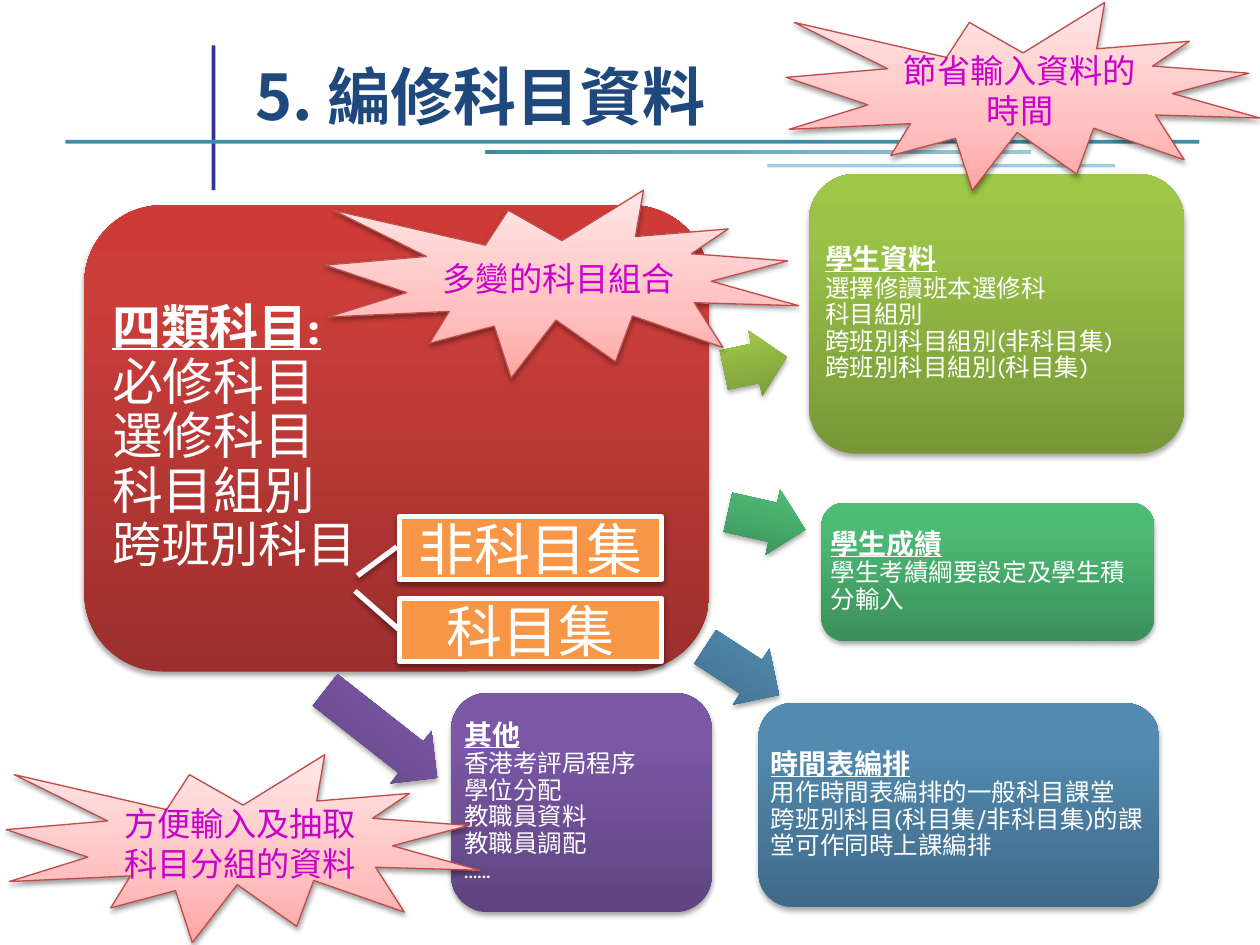
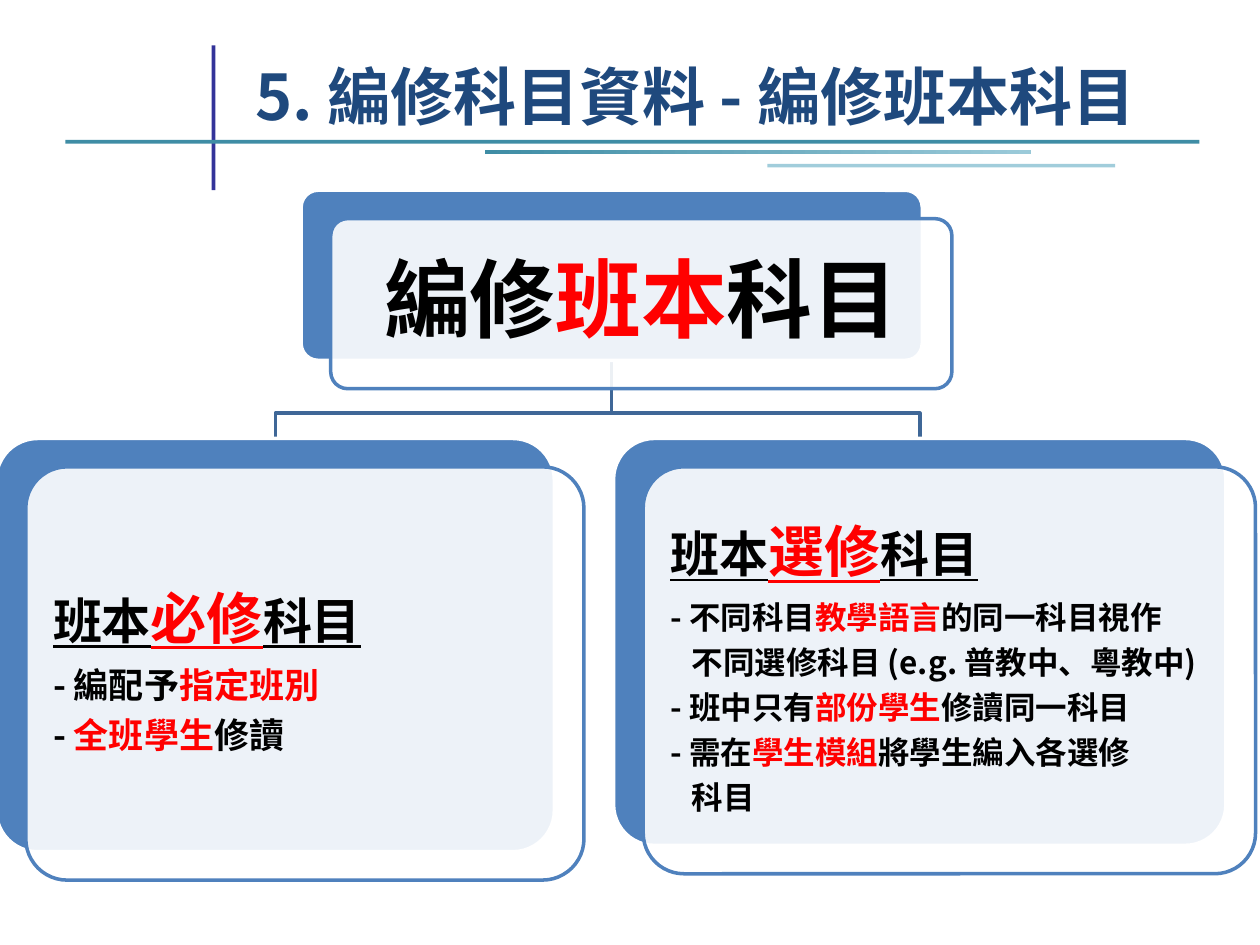
from dataclasses import dataclass
from itertools import chain, repeat

from pptx import Presentation
from pptx.dml.color import RGBColor
from pptx.enum.shapes import MSO_SHAPE as SHAPE
from pptx.enum.text import MSO_ANCHOR as ANCHOR, PP_ALIGN as ALIGN
from pptx.oxml import parse_xml
from pptx.oxml.ns import nsdecls, qn
from pptx.util import Inches, Pt

WHITE = RGBColor(0xFF, 0xFF, 0xFF)
BLACK = RGBColor(0, 0, 0)
RED = RGBColor(0xFF, 0, 0)
NAVY = RGBColor(0x1F, 0x49, 0x7D)
INDIGO = RGBColor(0x33, 0x33, 0x99)
TEAL = RGBColor(0x3F, 0x8D, 0xA5)
PALE_TEAL = RGBColor(0x9B, 0xCA, 0xD9)
LIGHT_TEAL = RGBColor(0xA1, 0xCD, 0xDB)
BLUE = RGBColor(0x4F, 0x81, 0xBD)
LINK_BLUE = RGBColor(0x3F, 0x67, 0x97)
ORANGE = RGBColor(0xF7, 0x96, 0x46)
MAGENTA = RGBColor(0xCC, 0, 0xCC)
SEAL_EDGE = RGBColor(0xBF, 0x4C, 0x48)


def ramp(positions, *colors):
    return list(zip(positions, map(RGBColor.from_string, colors)))


PANEL_STOPS = (0, 80, 100)
CRIMSON = ramp(PANEL_STOPS, "9C2F2D", "CB3E3A", "CE3B37")
LIME = ramp(PANEL_STOPS, "779737", "9BC348", "9DC746")
GREEN = ramp(PANEL_STOPS, "3B8F5A", "4DBA75", "4BBD75")
STEEL = ramp(PANEL_STOPS, "3F6A88", "528AB0", "518BB3")
PURPLE = ramp(PANEL_STOPS, "5F4480", "7B58A6", "7C57A8")
PINK = ramp((0, 35, 100), "FFA6A5", "FFC0BF", "FFE7E7")

KARLA = "Karla"
SANS_TC = "Noto Sans CJK TC"
SANS_SC = "Noto Sans CJK SC"

SLIDE_W, SLIDE_H = Inches(10), Inches(7.5)
COL, ROW = SLIDE_W / 100, SLIDE_H / 75


@dataclass
class Box:
    left: float
    top: float
    width: float
    height: float

    @property
    def center(self):
        return self.left + self.width / 2

    @property
    def bottom(self):
        return self.top + self.height

    def within(self, left, top, width, height):
        return Box(self.left + left, self.top + top, width, height)

    def emu(self):
        return (round(self.left * COL), round(self.top * ROW),
                round(self.width * COL), round(self.height * ROW))


PAGE = Box(0, 0, 100, 75)


def set_gradient(sp, stops, angle):
    sp.fill.background()
    gs = "".join(f'<a:gs pos="{pos * 1000}"><a:srgbClr val="{color}"/></a:gs>'
                 for pos, color in stops)
    spPr = sp._element.spPr
    spPr.replace(spPr.find(qn("a:noFill")), parse_xml(
        f'<a:gradFill {nsdecls("a")} rotWithShape="1"><a:gsLst>{gs}</a:gsLst>'
        f'<a:lin ang="{angle * 60000}" scaled="0"/></a:gradFill>'))


def set_line(sp, color, width):
    if color is None:
        sp.line.fill.background()
    else:
        sp.line.color.rgb = color
        sp.line.width = Pt(width)


def set_shadow(sp, alpha, dist):
    effects = sp._element.spPr.find(qn("a:effectLst"))
    effects.append(parse_xml(
        f'<a:outerShdw {nsdecls("a")} blurRad="{Pt(3.1)}" dist="{Pt(dist)}" '
        f'dir="5400000" rotWithShape="0"><a:srgbClr val="000000">'
        f'<a:alpha val="{alpha * 1000}"/></a:srgbClr></a:outerShdw>'))


def add_block(slide, kind, box, fill, line=None, width=1, adj=(), angle=270):
    sp = slide.shapes.add_shape(kind, *box.emu())
    for i, value in enumerate(adj):
        sp.adjustments[i] = value
    sp.shadow.inherit = False
    if isinstance(fill, list):
        set_gradient(sp, fill, angle)
    else:
        sp.fill.solid()
        sp.fill.fore_color.rgb = fill
    set_line(sp, line, width)
    return sp


def set_frame(sp, margin_x=0.1, margin_y=0.05):
    tf = sp.text_frame
    tf.word_wrap = True
    tf.vertical_anchor = ANCHOR.MIDDLE
    tf.margin_left = tf.margin_right = Inches(margin_x)
    tf.margin_top = tf.margin_bottom = Inches(margin_y)
    return tf


def set_font(p, name, color, size=None, bold=False):
    font = p.font
    font.name = name
    font.color.rgb = color
    font.bold = bold
    if size:
        font.size = Pt(size)
    font._element.find(qn("a:latin")).addnext(
        parse_xml(f'<a:ea {nsdecls("a")} typeface="{name}"/>'))


def add_bands(slide, layout):
    bands = [
        (Box(16.8, 3.6, 0.3, 11.5), INDIGO),
        (Box(5.2, 11.1, 90, 0.3), TEAL),
        (Box(38.5, 11.9, 43.3, 0.3), [(0, TEAL), (100, PALE_TEAL)]),
        (Box(60.9, 13, 27.6, 0.3), LIGHT_TEAL),
    ]
    for box, fill in bands:
        sp = add_block(slide, SHAPE.RECTANGLE, box, fill, angle=0)
        layout.shapes._spTree.append(sp._element)


def add_title(slide, text):
    title = slide.shapes.title
    title.left, title.top, title.width, title.height = Box(19.3, 2.8, 78.3, 8.3).emu()
    tf = title.text_frame
    tf.text = text
    tf.vertical_anchor = ANCHOR.BOTTOM
    p = tf.paragraphs[0]
    p.alignment = ALIGN.LEFT
    set_font(p, SANS_TC, NAVY, 36, True)


def add_panel(slide, box, fill, lines, sizes, margin=0.02):
    sp = add_block(slide, SHAPE.ROUNDED_RECTANGLE, box, fill)
    set_shadow(sp, 35, 1.8)
    p = set_frame(sp, margin, margin).paragraphs[0]
    p.alignment = ALIGN.LEFT
    p.line_spacing = 0.9
    set_font(p, KARLA, WHITE)
    for i, (line, size) in enumerate(zip(lines, sizes)):
        if i:
            p.add_line_break()
        r = p.add_run()
        r.text = line
        r.font.size = Pt(size)
        r.font.bold = r.font.underline = i == 0


def add_arrow(slide, box, fill, rotation):
    sp = add_block(slide, SHAPE.RIGHT_ARROW, box, fill, adj=(0.6, 0.5))
    sp.rotation = rotation
    set_shadow(sp, 35, 1.8)


def add_label(slide, kind, box, fill, text, size, color, line, width, adj=()):
    sp = add_block(slide, kind, box, fill, line, width, adj)
    set_shadow(sp, 38, 1.6)
    tf = set_frame(sp)
    tf.text = text
    p = tf.paragraphs[0]
    p.alignment = ALIGN.CENTER
    set_font(p, SANS_SC, color, size)


def add_subject_types(slide, box):
    add_panel(slide, box, CRIMSON,
              ["四類科目:", "必修科目", "選修科目", "科目組別", "跨班別科目"],
              (28, 29, 29, 29, 28), 0.04)


def add_uses(slide, box):
    uses = [
        (Box(64.2, 13.8, 29.8, 22.2), LIME, Box(57.4, 26.2, 5.1, 5.3), -11.8,
         ["學生資料", "選擇修讀班本選修科", "科目組別",
          "跨班別科目組別(非科目集)", "跨班別科目組別(科目集)"]),
        (Box(65.2, 39.9, 26.4, 11), GREEN, Box(57.7, 38.7, 6.3, 5.3), 12.7,
         ["學生成績", "學生考績綱要設定及學生積分輸入"]),
        (Box(60.2, 55.8, 31.8, 16.2), STEEL, Box(55.4, 50.6, 7, 5.3), 33.1,
         ["時間表編排", "用作時間表編排的一般科目課堂",
          "跨班別科目(科目集/非科目集)的課堂可作同時上課編排"]),
        (Box(35.8, 55, 20.7, 17.4), PURPLE, Box(24.6, 55.6, 11.3, 5.3), 38.1,
         ["其他", "香港考評局程序", "學位分配", "教職員資料", "教職員調配", "……"]),
    ]
    for panel, fill, arrow, rotation, lines in uses:
        add_arrow(slide, box.within(arrow.left, arrow.top, arrow.width, arrow.height),
                  fill, rotation)
        add_panel(slide, box.within(panel.left, panel.top, panel.width, panel.height),
                  fill, lines, chain([16], repeat(14)))


def add_set_callouts(slide, box):
    callouts = [
        (6.5, "科目集", (0.5, 0, -0.12, -0.17)),
        (0, "非科目集", (0.48, -0.01, 0.94, -0.16)),
    ]
    for top, text, adj in callouts:
        add_label(slide, SHAPE.LINE_CALLOUT_1, box.within(0, top, box.width, 5),
                  ORANGE, text, 32, WHITE, WHITE, 3, adj)


def add_benefits(slide, box):
    benefits = [
        (25.8, 15.1, "多變的科目組合"),
        (62.4, 0.2, "節省輸入資料的時間"),
        (0.5, 59.9, "方便輸入及抽取科目分組的資料"),
    ]
    for left, top, text in benefits:
        add_label(slide, SHAPE.EXPLOSION1, box.within(left, top, 37.6, 14.9),
                  PINK, text, 19, MAGENTA, SEAL_EDGE, 0.75)


def add_card(slide, box, paragraphs, margin, font, align=ALIGN.LEFT):
    add_block(slide, SHAPE.ROUNDED_RECTANGLE, box, BLUE, WHITE, 2, (0.1,))
    sp = add_block(slide, SHAPE.ROUNDED_RECTANGLE,
                   box.within(2.35, 2.25, box.width, box.height),
                   WHITE, BLUE, 2, (0.1,))
    fill = sp._element.spPr.find(qn("a:solidFill"))
    fill[0].append(parse_xml(f'<a:alpha {nsdecls("a")} val="90000"/>'))
    tf = set_frame(sp, margin, margin)
    for i, (size, indent, runs) in enumerate(paragraphs):
        p = tf.add_paragraph() if i else tf.paragraphs[0]
        p.alignment = align
        p.line_spacing = 0.9
        p.space_after = Pt(0.35 * size)
        if indent:
            p._p.get_or_add_pPr().set("marL", str(Inches(indent)))
        set_font(p, font, BLACK, size, True)
        for j, text in enumerate(runs):
            r = p.add_run()
            r.text = text
            if j % 2:
                r.font.color.rgb = RED
            if size == HEAD_SIZE:
                r.font.underline = True
                if j % 2:
                    r.font.size = Pt(32)


HEAD_SIZE = 28


def add_link(slide, parent, child):
    fork = parent.bottom + 4.2
    points = [(parent.center, fork), (child.center, fork), (child.center, child.top)]
    builder = slide.shapes.build_freeform(
        round(parent.center * COL), round(parent.bottom * ROW), scale=1)
    builder.add_line_segments([(x * COL, y * ROW) for x, y in points], close=False)
    sp = builder.convert_to_shape()
    sp.shadow.inherit = False
    sp.fill.background()
    set_line(sp, LINK_BLUE, 2)


def add_subject_tree(slide, box):
    root = box.within(23.9, 15.1, 49.3, 13.5)
    required = box.within(-0.3, 34.8, 44.3, 32.8)
    elective = box.within(48.7, 34.8, 48.6, 32.3)
    for child in (elective, required):
        add_link(slide, root, child)
    add_card(slide, root, [(49, 0, ["編修", "班本", "科目"])], 0.2, KARLA, ALIGN.CENTER)
    add_card(slide, required, [
        (HEAD_SIZE, 0, ["班本", "必修", "科目"]),
        (20, 0, ["- 編配予", "指定班別"]),
        (20, 0, ["- ", "全班學生", "修讀"]),
    ], 0.12, SANS_TC)
    add_card(slide, elective, [
        (HEAD_SIZE, 0, ["班本", "選修", "科目"]),
        (18, 0, ["- 不同科目", "教學語言", "的同一科目視作"]),
        (18, 0.17, ["不同選修科目 (e.g. 普教中、粵教中)"]),
        (18, 0, ["- 班中只有", "部份學生", "修讀同一科目"]),
        (18, 0, ["- 需在", "學生模組", "將學生編入各選修"]),
        (18, 0.17, ["科目"]),
    ], 0.12, SANS_TC)


def build_overview(slide):
    add_title(slide, "5. 編修科目資料")
    add_subject_types(slide, Box(6.7, 16.3, 49.6, 37))
    add_uses(slide, PAGE)
    add_set_callouts(slide, Box(31.7, 41, 20.8, 11.5))
    add_benefits(slide, PAGE)


def build_class_subjects(slide):
    add_title(slide, "5. 編修科目資料 - 編修班本科目")
    add_subject_tree(slide, PAGE)


def main():
    prs = Presentation()
    prs.slide_width, prs.slide_height = SLIDE_W, SLIDE_H
    layout = prs.slide_layouts[5]
    overview, class_subjects = (prs.slides.add_slide(layout) for _ in range(2))
    add_bands(overview, layout)
    build_overview(overview)
    build_class_subjects(class_subjects)
    prs.save("out.pptx")


if __name__ == "__main__":
    main()
